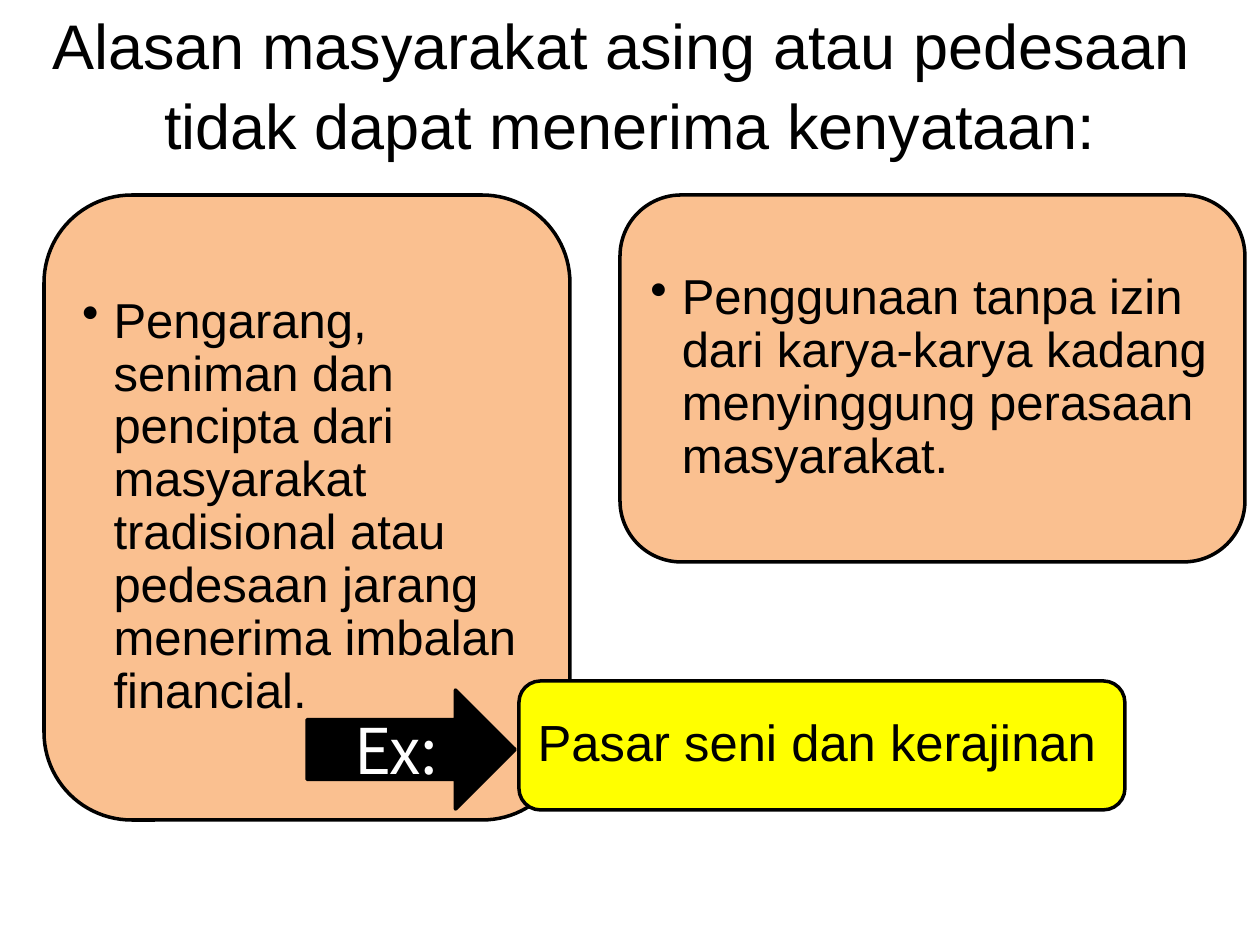
from dataclasses import dataclass

from lxml import etree
from pptx import Presentation
from pptx import util as u
from pptx.dml.color import RGBColor
from pptx.enum import shapes, text
from pptx.oxml.ns import qn

EMU_PER_PX = 914400 / 126
BLACK, WHITE, PEACH, YELLOW = "000000", "FFFFFF", "FAC090", "FFFF00"
ROUNDED = shapes.MSO_SHAPE.ROUNDED_RECTANGLE
ARROW = shapes.MSO_SHAPE.RIGHT_ARROW


@dataclass
class Box:
    left: int
    top: int
    width: int
    height: int
    label: str
    fill: str
    size: int = 28
    kind: shapes.MSO_SHAPE = ROUNDED
    font: str = "Arial"
    color: str = BLACK
    bullet: bool = False
    align: text.PP_ALIGN = text.PP_ALIGN.LEFT
    spacing: float = 0.9


BOXES = [
    Box(44, 195, 526, 625,
        "Pengarang, seniman dan pencipta dari masyarakat tradisional atau "
        "pedesaan jarang menerima imbalan financial.", PEACH, bullet=True),
    Box(620, 195, 625, 367,
        "Penggunaan tanpa izin dari karya-karya kadang menyinggung perasaan "
        "masyarakat.", PEACH, bullet=True),
    Box(307, 690, 208, 119, "Ex:", BLACK, 36, ARROW, "Noto Sans CJK KR", WHITE,
        align=text.PP_ALIGN.CENTER, spacing=1.0),
    Box(519, 681, 606, 129, "Pasar seni dan kerajinan", YELLOW, 29),
]


def px(n: int) -> u.Emu:
    return u.Emu(round(n * EMU_PER_PX))


def rgb(value: str) -> RGBColor:
    return RGBColor.from_string(value)


def add_bullet(p) -> None:
    """Give the paragraph a round bullet with a quarter-inch hanging indent."""
    pPr = p._p.get_or_add_pPr()
    indent = u.Inches(0.25)
    pPr.set("marL", str(indent))
    pPr.set("indent", str(-indent))
    etree.SubElement(pPr, qn("a:buChar")).set("char", "•")


def style(p, name: str, size: int, color: str) -> None:
    for r in p.runs:
        r.font.name = name
        r.font.size = u.Pt(size)
        r.font.color.rgb = rgb(color)


def add_title(s, label: str) -> None:
    sp = s.shapes.title
    sp.left, sp.top, sp.width, sp.height = px(0), px(0), px(1260), px(165)
    tf = sp.text_frame
    tf.text = label
    tf.word_wrap = True
    tf.auto_size = text.MSO_AUTO_SIZE.NONE
    tf.vertical_anchor = text.MSO_ANCHOR.MIDDLE
    for p in tf.paragraphs:
        p.alignment = text.PP_ALIGN.CENTER
        p.line_spacing = 1.05
        style(p, "Arial", 36, BLACK)


def add_box(s, box: Box) -> None:
    sp = s.shapes.add_shape(box.kind, px(box.left), px(box.top),
                            px(box.width), px(box.height))
    sp.shadow.inherit = False
    sp.fill.solid()
    sp.fill.fore_color.rgb = rgb(box.fill)
    sp.line.color.rgb = rgb(BLACK)
    sp.line.width = u.Pt(2)
    tf = sp.text_frame
    tf.word_wrap = True
    tf.vertical_anchor = text.MSO_ANCHOR.MIDDLE
    tf.text = box.label
    p = tf.paragraphs[0]
    p.alignment = box.align
    p.line_spacing = box.spacing
    if box.bullet:
        add_bullet(p)
    style(p, box.font, box.size, box.color)


def main() -> None:
    prs = Presentation()
    prs.slide_width, prs.slide_height = px(1260), px(945)
    s = prs.slides.add_slide(prs.slide_layouts[5])
    add_title(s, "Alasan masyarakat asing atau pedesaan \n"
                 "tidak dapat menerima kenyataan:")
    for box in BOXES:
        add_box(s, box)
    prs.save("out.pptx")


if __name__ == "__main__":
    main()
